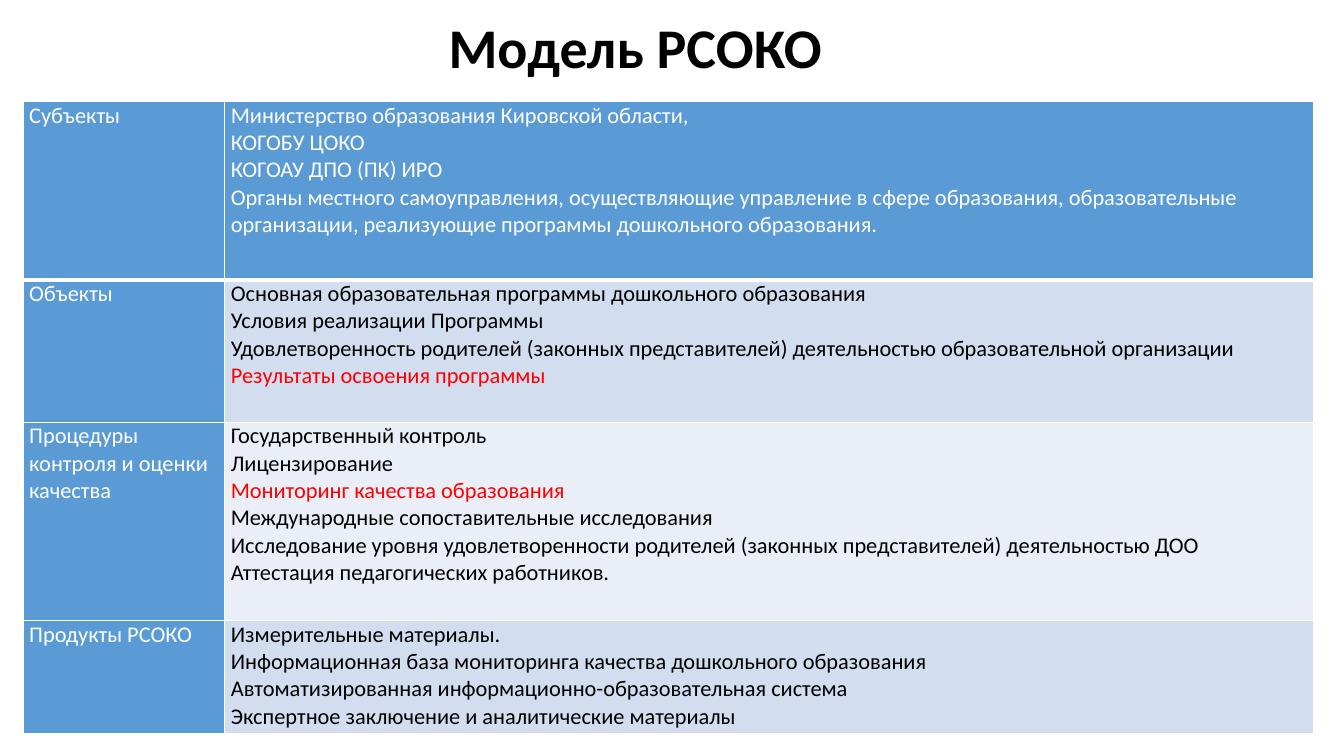
from lxml import etree
from pptx import Presentation, util as u
from pptx.dml.color import RGBColor
from pptx.enum import text
from pptx.oxml.ns import qn

WHITE, BLACK, RED, BLUE = "FFFFFF", "000000", "FF0000", "5B9BD5"
LEFT, CENTER, JUSTIFY = (
    text.PP_ALIGN.LEFT, text.PP_ALIGN.CENTER, text.PP_ALIGN.JUSTIFY)

TITLE = "Модель РСОКО"
COLUMNS = [200, 1080]
ROWS = [
    dict(height=177, name="Субъекты", fill=BLUE, color=WHITE, align=LEFT, items=[
        "Министерство образования Кировской области,",
        "КОГОБУ ЦОКО",
        "КОГОАУ ДПО (ПК) ИРО",
        "Органы местного самоуправления, осуществляющие управление в сфере "
        "образования, образовательные организации, реализующие программы "
        "дошкольного образования."]),
    dict(height=141, name="Объекты", fill="D2DEEF", items=[
        "Основная образовательная программы дошкольного образования",
        "Условия реализации Программы",
        "Удовлетворенность родителей (законных представителей) деятельностью "
        "образовательной организации",
        "Результаты освоения программы"]),
    dict(height=197, name="Процедуры контроля и оценки качества",
         name_align=LEFT, fill="EAEFF7", items=[
             "Государственный контроль",
             "Лицензирование",
             "Мониторинг качества образования",
             "Международные сопоставительные исследования",
             "Исследование уровня удовлетворенности родителей (законных "
             "представителей) деятельностью ДОО",
             "Аттестация педагогических работников."]),
    dict(height=112, name="Продукты РСОКО", fill="D2DEEF", items=[
        "Измерительные материалы.",
        "Информационная база мониторинга качества дошкольного образования",
        "Автоматизированная информационно-образовательная система",
        "Экспертное заключение и аналитические материалы"]),
]
HIGHLIGHTS = {"Результаты освоения программы", "Мониторинг качества образования"}


def px(length):
    return u.Emu(length * 9144)


def rgb(color):
    return RGBColor.from_string(color)


def assign(target, values):
    for name, value in values.items():
        setattr(target, name, value)


class SlideBuilder:
    font = "Calibri"
    cell_format = dict(margin_left=px(6), margin_right=px(6),
                       margin_top=0, margin_bottom=0,
                       vertical_anchor=text.MSO_ANCHOR.TOP)

    def __init__(self, deck):
        self.page = deck.slides.add_slide(deck.slide_layouts[5])

    def paragraphs(self, frame, lines, size, align, bold=False, spacing=1.0):
        for index, (line, color) in enumerate(lines):
            para = frame.add_paragraph() if index else frame.paragraphs[0]
            assign(para, dict(alignment=align, line_spacing=spacing,
                              space_before=u.Pt(0), space_after=u.Pt(0)))
            span = para.add_run()
            span.text = line
            assign(span.font, dict(name=self.font, size=u.Pt(size), bold=bold))
            span.font.color.rgb = rgb(color)

    def title(self, line, left, top, width, height):
        box = self.page.shapes.title
        assign(box, dict(left=px(left), top=px(top),
                         width=px(width), height=px(height)))
        assign(box.text_frame, dict(word_wrap=True,
                                    auto_size=text.MSO_AUTO_SIZE.NONE,
                                    vertical_anchor=text.MSO_ANCHOR.MIDDLE))
        self.paragraphs(box.text_frame, [(line, BLACK)], 40, CENTER, True, 0.9)

    def borders(self, cell, bottom):
        properties = cell._tc.get_or_add_tcPr()
        for side, width in dict(L=1, R=1, T=1, B=bottom).items():
            line = etree.SubElement(properties, qn("a:ln" + side),
                                    w=str(u.Pt(width)))
            fill = etree.SubElement(line, qn("a:solidFill"))
            etree.SubElement(fill, qn("a:srgbClr"), val=WHITE)

    def cell(self, cell, lines, fill, align, bottom):
        assign(cell, self.cell_format)
        self.borders(cell, bottom)
        cell.fill.solid()
        cell.fill.fore_color.rgb = rgb(fill)
        self.paragraphs(cell.text_frame, lines, 16, align)

    def table(self, rows, columns, left, top):
        height = sum(row["height"] for row in rows)
        grid = self.page.shapes.add_table(
            len(rows), len(columns), px(left), px(top),
            px(sum(columns)), px(height)).table
        for column, width in zip(grid.columns, columns):
            column.width = px(width)
        for index, row in enumerate(rows):
            grid.rows[index].height = px(row["height"])
            bottom = 1 if index else 3
            color = row.get("color", BLACK)
            items = [(item, RED if item in HIGHLIGHTS else color)
                     for item in row["items"]]
            self.cell(grid.cell(index, 0), [(row["name"], WHITE)], BLUE,
                      row.get("name_align", JUSTIFY), bottom)
            self.cell(grid.cell(index, 1), items, row["fill"],
                      row.get("align", JUSTIFY), bottom)


def main():
    deck = Presentation()
    assign(deck, dict(slide_width=px(1333), slide_height=px(750)))
    builder = SlideBuilder(deck)
    builder.title(TITLE, 160, 18, 940, 63)
    builder.table(ROWS, COLUMNS, 23, 101)
    deck.save("out.pptx")


if __name__ == "__main__":
    main()
